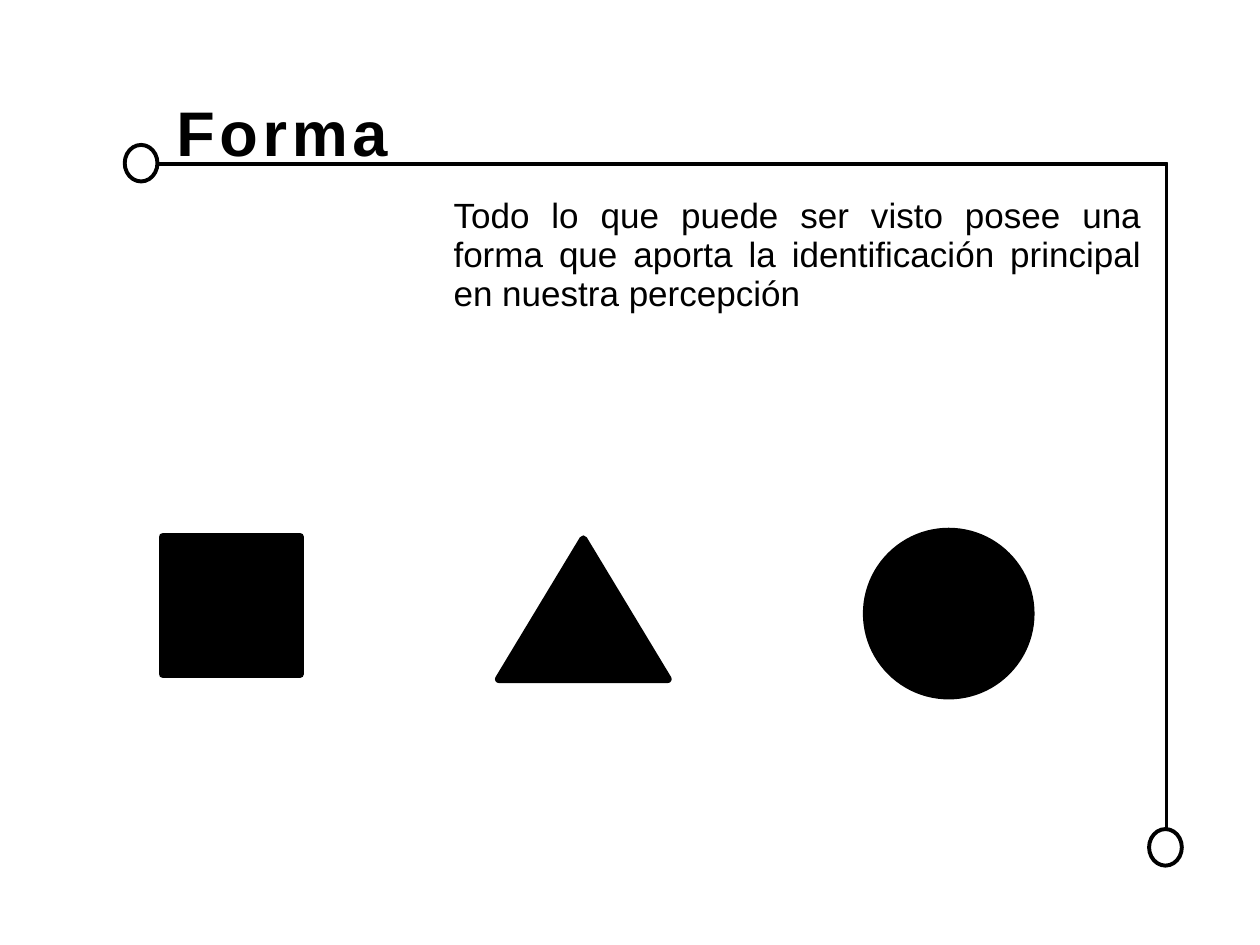
from dataclasses import dataclass

from lxml import etree
from pptx import Presentation
from pptx.dml.color import RGBColor
from pptx.enum.shapes import MSO_SHAPE
from pptx.enum.text import PP_ALIGN
from pptx.oxml.ns import qn
from pptx.util import Inches, Pt

OVAL = MSO_SHAPE.OVAL
SQUARE = MSO_SHAPE.RECTANGLE
TRIANGLE = MSO_SHAPE.ISOSCELES_TRIANGLE
LEFT, JUSTIFY = PP_ALIGN.LEFT, PP_ALIGN.JUSTIFY


@dataclass(frozen=True)
class Theme:
    ink: RGBColor = RGBColor(0, 0, 0)
    font: str = "Arial"
    title_size: float = 36
    body_size: float = 20
    frame_line: float = 1
    ring_line: float = 2.25
    figure_line: float = 4.5


@dataclass(frozen=True)
class Figure:
    preset: MSO_SHAPE
    left: float
    top: float
    width: float
    height: float
    line: float
    filled: bool


@dataclass(frozen=True)
class TextBlock:
    text: str
    left: float
    top: float
    width: float
    height: float
    font: dict
    paragraph: dict
    tracking: float = 0


THEME = Theme()

# Frame bar: outer corner at top right, ring at each end
BAR_LEFT, BAR_TOP, BAR_RIGHT, BAR_BOTTOM = 1.25, 1.29, 9.26, 6.58
BAR_X, BAR_Y = 0.01, 0.02
RING_W, RING_H = 0.26, 0.29

RINGS = [
    Figure(OVAL, left, top, RING_W, RING_H, THEME.ring_line, False)
    for left, top in ((BAR_LEFT - RING_W, 1.15), (9.12, BAR_BOTTOM))
]
FIGURES = [
    Figure(SQUARE, 1.29, 4.26, 1.09, 1.09, THEME.figure_line, True),
    Figure(TRIANGLE, 3.96, 4.28, 1.34, 1.11, THEME.figure_line, True),
    Figure(OVAL, 6.88, 4.22, 1.3, 1.3, THEME.figure_line, True),
]
TEXTS = [
    TextBlock(
        "Forma", 1.4, 0.83, 1.83, 0.5,
        {"size": Pt(THEME.title_size), "bold": True},
        {"alignment": LEFT, "line_spacing": Pt(36.8)},
        tracking=2.7,
    ),
    TextBlock(
        "Todo lo que puede ser visto posee una forma que aporta "
        "la identificación principal en nuestra percepción",
        3.6, 1.56, 5.46, 0.93,
        {"size": Pt(THEME.body_size), "bold": False},
        {"alignment": JUSTIFY, "line_spacing": Pt(22.3)},
    ),
]


def set_attributes(target, values: dict) -> None:
    for name, value in values.items():
        setattr(target, name, value)


def style_shape(sp, line: float, filled: bool) -> None:
    sp.shadow.inherit = False
    if filled:
        sp.fill.solid()
        sp.fill.fore_color.rgb = THEME.ink
    else:
        sp.fill.background()
    sp.line.color.rgb = THEME.ink
    sp.line.width = Pt(line)
    etree.SubElement(sp.line._get_or_add_ln(), qn("a:round"))


def draw_figure(s, fig: Figure) -> None:
    box = map(Inches, (fig.left, fig.top, fig.width, fig.height))
    style_shape(s.shapes.add_shape(fig.preset, *box), fig.line, fig.filled)


def draw_frame(s) -> None:
    inner_x, inner_y = BAR_RIGHT - BAR_X, BAR_TOP + BAR_Y
    corners = [
        (BAR_LEFT, BAR_TOP), (BAR_RIGHT, BAR_TOP), (BAR_RIGHT, BAR_BOTTOM),
        (inner_x, BAR_BOTTOM), (inner_x, inner_y), (BAR_LEFT, inner_y),
    ]
    start, *rest = [(Inches(x), Inches(y)) for x, y in corners]
    builder = s.shapes.build_freeform(*start)
    builder.add_line_segments(rest, close=True)
    style_shape(builder.convert_to_shape(), THEME.frame_line, True)


def draw_text(s, block: TextBlock) -> None:
    box = map(Inches, (block.left, block.top, block.width, block.height))
    tf = s.shapes.add_textbox(*box).text_frame
    margins = ("margin_left", "margin_top", "margin_right", "margin_bottom")
    set_attributes(tf, {"word_wrap": True, **dict.fromkeys(margins, 0)})
    p = tf.paragraphs[0]
    set_attributes(p, block.paragraph)
    r = p.add_run()
    r.text = block.text
    set_attributes(r.font, {"name": THEME.font, **block.font})
    r.font.color.rgb = THEME.ink
    if block.tracking:
        r._r.get_or_add_rPr().set("spc", str(round(block.tracking * 100)))


def main() -> None:
    prs = Presentation()
    prs.slide_width, prs.slide_height = Inches(10), Inches(7.5)
    s = prs.slides.add_slide(prs.slide_layouts[6])

    # Frame, its end rings and the three basic forms
    draw_frame(s)
    for fig in RINGS + FIGURES:
        draw_figure(s, fig)

    # Title and explanation
    for block in TEXTS:
        draw_text(s, block)

    prs.save("out.pptx")


if __name__ == "__main__":
    main()
